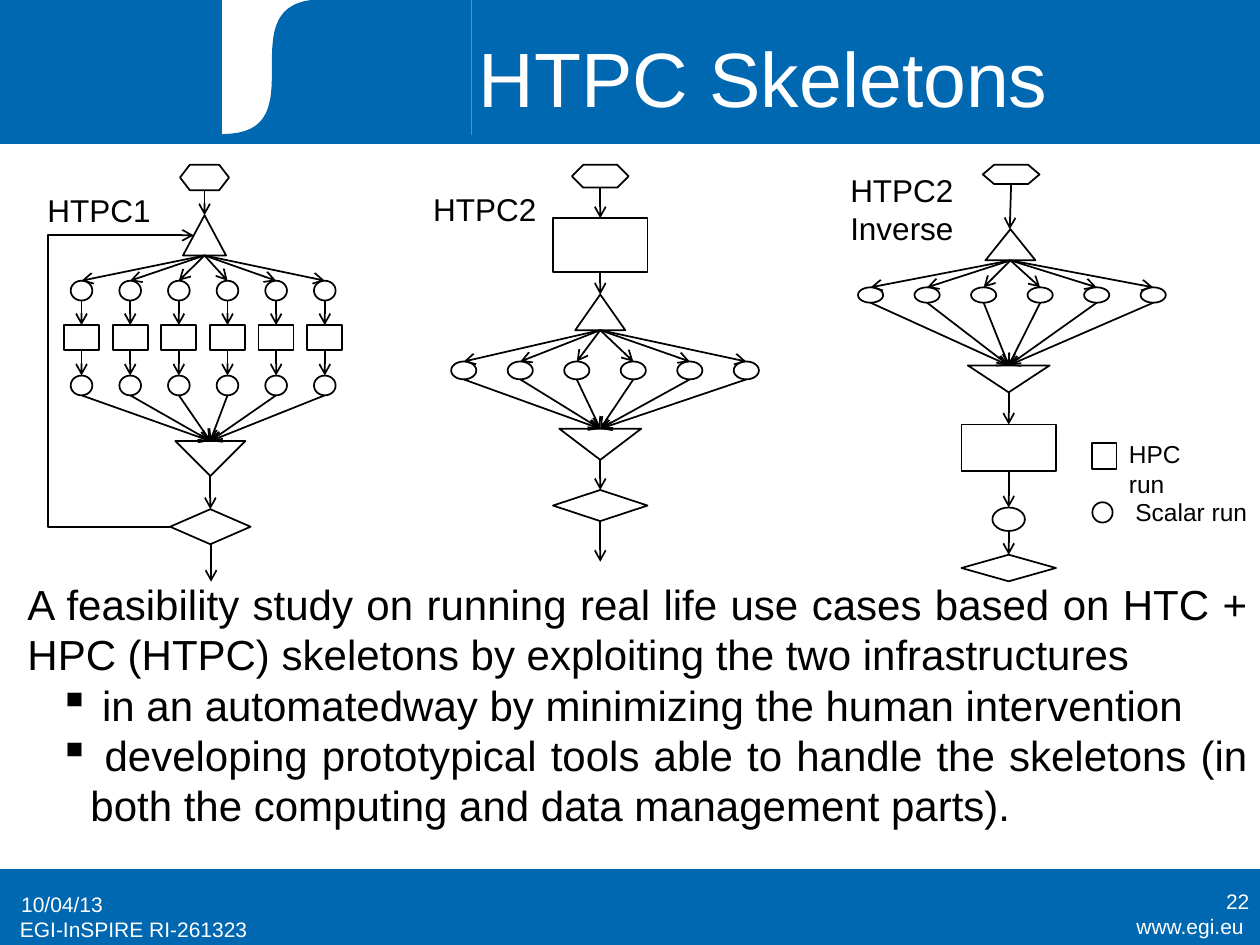
from pptx import Presentation
from pptx.dml.color import RGBColor
from pptx.enum.shapes import MSO_CONNECTOR, MSO_SHAPE
from pptx.enum.text import MSO_ANCHOR, PP_ALIGN
from pptx.oxml.ns import qn
from pptx.util import Pt
from lxml.etree import SubElement

BLUE = "0067B1"
WHITE = "FFFFFF"
BLACK = "000000"
BRANCHES = 6
HEXAGON = MSO_SHAPE.FLOWCHART_PREPARATION
SPLIT = MSO_SHAPE.FLOWCHART_EXTRACT
MERGE = MSO_SHAPE.FLOWCHART_MERGE
SCALAR = MSO_SHAPE.FLOWCHART_CONNECTOR
HPC = MSO_SHAPE.FLOWCHART_PROCESS
DECISION = MSO_SHAPE.FLOWCHART_DECISION


def color(value):
    return RGBColor.from_string(value)


def paint(shape, fill, line):
    shape.shadow.inherit = False
    shape.fill.solid()
    shape.fill.fore_color.rgb = color(fill)
    shape.line.color.rgb = color(line)
    shape.line.width = Pt(0.75)


def add_panel(page, left, top, width, height, fill):
    panel = page.shapes.add_shape(MSO_SHAPE.RECTANGLE, Pt(left), Pt(top), Pt(width), Pt(height))
    paint(panel, fill, fill)


def add_curve(page, left, top, width, height, bend):
    right, bottom = left + width, top + height
    points = []
    for step in range(1, 33):
        t = step / 32
        x = left + bend * (3 * t * (1 - t) ** 2 + t ** 3)
        y = bottom - height * (3 * t ** 2 * (1 - t) + t ** 3)
        points.append((Pt(x), Pt(y)))
    points += [(Pt(right), Pt(top)), (Pt(right), Pt(bottom))]
    builder = page.shapes.build_freeform(Pt(left), Pt(bottom))
    builder.add_line_segments(points, close=True)
    paint(builder.convert_to_shape(), BLUE, BLUE)


def format_paragraph(para, size, ink, align):
    para.alignment = align
    for span in para.runs:
        span.font.name = "Arial"
        span.font.size = Pt(size)
        span.font.color.rgb = color(ink)


def add_text(page, text, left, top, width, height, size, ink=BLACK,
             align=PP_ALIGN.LEFT, wrap=False, anchor=MSO_ANCHOR.TOP):
    box = page.shapes.add_textbox(Pt(left), Pt(top), Pt(width), Pt(height))
    box.text_frame.word_wrap = wrap
    box.text_frame.vertical_anchor = anchor
    box.text_frame.text = text
    for para in box.text_frame.paragraphs:
        format_paragraph(para, size, ink, align)
    return box


def add_bullet(para):
    properties = para._p.get_or_add_pPr()
    properties.set("marL", str(Pt(36)))
    properties.set("indent", str(Pt(-18)))
    SubElement(properties, qn("a:buChar")).set("char", "▪")


def add_node(page, kind, center, top, width, height):
    node = page.shapes.add_shape(kind, Pt(center - width / 2), Pt(top), Pt(width), Pt(height))
    node.shadow.inherit = False
    node.fill.background()
    node.line.color.rgb = color(BLACK)
    node.line.width = Pt(1)


def add_arrow(page, start, end, kind=MSO_CONNECTOR.STRAIGHT):
    arrow = page.shapes.add_connector(kind, *(Pt(value) for value in start + end))
    arrow.line.color.rgb = color(BLACK)
    arrow.line.width = Pt(1)
    SubElement(arrow.line._get_or_add_ln(), qn("a:tailEnd")).set("type", "arrow")
    SubElement(arrow._element.spPr, qn("a:effectLst"))
    return arrow


def add_loop(page, start, end, side):
    loop = add_arrow(page, start, end, MSO_CONNECTOR.ELBOW)
    ratio = (side - start[0]) / (end[0] - start[0])
    geometry = loop._element.spPr.find(qn("a:prstGeom"))
    values = geometry.find(qn("a:avLst"))
    if values is None:
        values = SubElement(geometry, qn("a:avLst"))
    guide = SubElement(values, qn("a:gd"))
    guide.set("name", "adj1")
    guide.set("fmla", f"val {round(ratio * 100000)}")


def add_row(page, kind, centers, top, width, height):
    for center in centers:
        add_node(page, kind, center, top, width, height)


def add_chain(page, center, nodes):
    for kind, top, width, height in nodes:
        add_node(page, kind, center, top, width, height)
    for (_, top, _, height), (_, below, _, _) in zip(nodes, nodes[1:]):
        add_arrow(page, (center, top + height), (center, below))


def fan_out(page, apex, centers, top):
    for center in centers:
        add_arrow(page, apex, (center, top))


def fan_in(page, centers, bottom, target):
    for center in centers:
        add_arrow(page, (center, bottom), target)


def spread(first, pitch):
    return [first + pitch * index for index in range(BRANCHES)]


def draw_htpc1(page):
    centers = spread(46.6, 27.8)
    add_chain(page, 116.9, [(HEXAGON, 94.2, 28, 14.5), (SPLIT, 123, 24.6, 23)])
    fan_out(page, (116.9, 146), centers, 160.4)
    add_row(page, SCALAR, centers, 160.4, 12.4, 11.3)
    add_row(page, HPC, centers, 185.8, 20, 14.4)
    add_row(page, SCALAR, centers, 214.6, 12.4, 11.3)
    for center in centers:
        add_arrow(page, (center, 171.7), (center, 185.8))
        add_arrow(page, (center, 200.2), (center, 214.6))
    fan_in(page, centers, 225.9, (120.2, 252))
    add_chain(page, 120.2, [(MERGE, 252, 40, 20), (DECISION, 291, 46, 20)])
    add_arrow(page, (120.6, 311), (120.6, 332.4))
    add_loop(page, (97.2, 301), (110.7, 134.5), 27.4)


def draw_htpc2(page):
    center = 343
    centers = spread(265, 32.3)
    add_chain(page, center, [(HEXAGON, 94.2, 32.4, 13), (HPC, 124.7, 54, 30.6),
                             (SPLIT, 168.3, 28.6, 20.4)])
    fan_out(page, (center, 188.7), centers, 206.6)
    add_row(page, SCALAR, centers, 206.6, 14.4, 10.2)
    fan_in(page, centers, 216.8, (center, 245))
    add_chain(page, center, [(MERGE, 245, 46.8, 17.8), (DECISION, 280, 54, 17.8)])
    add_arrow(page, (center, 297.8), (center, 321))


def draw_inverse(page):
    center = 576.4
    centers = spread(497.5, 32.3)
    add_node(page, HEXAGON, 577.8, 94.2, 32.4, 11)
    add_arrow(page, (577.8, 105.2), (577, 131))
    add_node(page, SPLIT, 577.4, 131, 28.6, 17.8)
    fan_out(page, (577.4, 148.8), centers, 164.2)
    add_row(page, SCALAR, centers, 164.2, 14.4, 8.8)
    fan_in(page, centers, 173, (center, 208.8))
    add_chain(page, center, [(MERGE, 208.8, 46.8, 15.4), (HPC, 242.6, 54, 26.7),
                             (SCALAR, 290, 18.6, 13.4), (DECISION, 317, 54, 15.2)])


def draw_legend(page):
    add_node(page, HPC, 631, 253, 14, 15)
    add_text(page, "HPC run", 638, 247.6, 65.5, 24.5, 14, wrap=True)
    add_node(page, SCALAR, 630, 287, 11.6, 11.6)
    add_text(page, "Scalar run", 641.5, 280.2, 78.5, 24.5, 14, align=PP_ALIGN.CENTER)


def draw_frame(page):
    add_panel(page, 0, 496.8, 720, 43.2, BLUE)
    add_panel(page, 0, 0, 720, 82, BLUE)
    add_panel(page, 127.4, 0, 141.8, 77, WHITE)
    add_curve(page, 127.4, 0, 141.8, 77, 56.8)
    add_text(page, "www.egi.eu", 604, 518.4, 113.8, 22, 12, WHITE, PP_ALIGN.RIGHT, True)
    add_text(page, "EGI-InSPIRE RI-261323", 4.3, 520, 180, 22, 12, WHITE, wrap=True)
    add_text(page, "10/04/13", 5, 502, 168, 29, 12, WHITE, wrap=True, anchor=MSO_ANCHOR.MIDDLE)
    add_text(page, "22", 553, 500.4, 168, 29, 12, WHITE, PP_ALIGN.RIGHT, True, MSO_ANCHOR.MIDDLE)


def place_title(page, text):
    title = page.shapes.title
    title.left, title.top, title.width, title.height = Pt(167), Pt(9.4), Pt(538.6), Pt(68.4)
    title.text_frame.text = text
    title.text_frame.vertical_anchor = MSO_ANCHOR.MIDDLE
    format_paragraph(title.text_frame.paragraphs[0], 44, WHITE, PP_ALIGN.CENTER)
    title.element.getparent().append(title.element)


def draw_summary(page):
    lines = [
        "A feasibility study on running real life use cases based on HTC + HPC (HTPC) "
        "skeletons by exploiting the two infrastructures",
        " in an automatedway by minimizing the human intervention",
        " developing prototypical tools able to handle the skeletons "
        "(in both the computing and data management parts).",
    ]
    box = add_text(page, "\n".join(lines), 8.6, 326.9, 711.4, 152.6, 24,
                   align=PP_ALIGN.JUSTIFY, wrap=True)
    for para in box.text_frame.paragraphs[1:]:
        para.level = 1
        add_bullet(para)


def main():
    deck = Presentation()
    deck.slide_width, deck.slide_height = Pt(720), Pt(540)
    page = deck.slides.add_slide(deck.slide_layouts[5])
    draw_frame(page)
    place_title(page, "HTPC Skeletons")
    draw_htpc1(page)
    draw_htpc2(page)
    draw_inverse(page)
    draw_legend(page)
    draw_summary(page)
    add_text(page, "HTPC1", 20, 105.8, 74.2, 29, 18)
    add_text(page, "HTPC2", 240.5, 105.2, 74.2, 29, 18)
    add_text(page, "HTPC2\nInverse", 478.8, 94.3, 74.2, 51, 18)
    deck.save("out.pptx")


if __name__ == "__main__":
    main()
